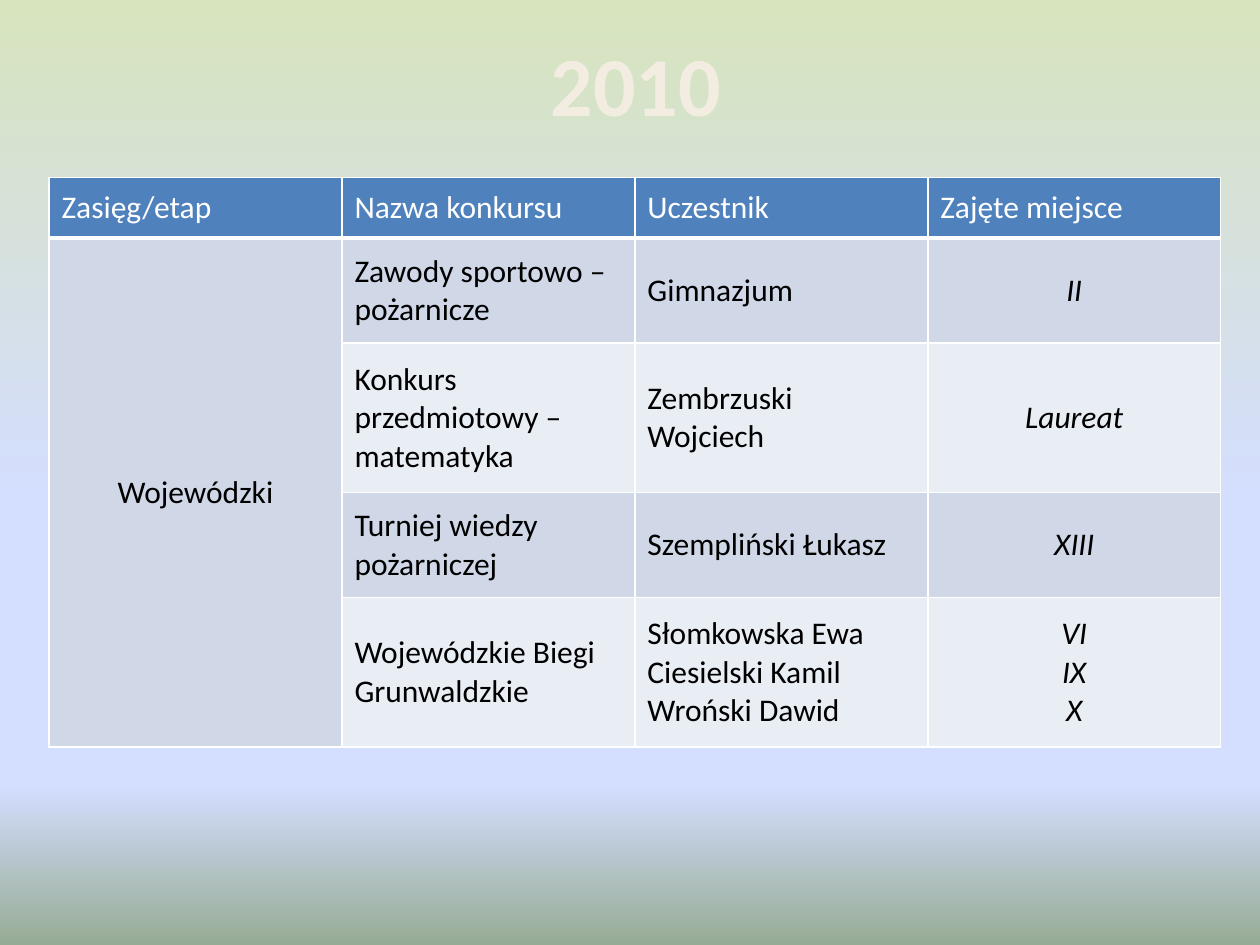
from copy import deepcopy
from dataclasses import dataclass

from lxml import etree
from pptx import Presentation
from pptx.dml.color import RGBColor
from pptx.enum.text import MSO_ANCHOR, PP_ALIGN
from pptx.oxml.ns import qn
from pptx.slide import Slide
from pptx.table import Table, _Cell
from pptx.text.text import TextFrame
from pptx.util import Pt

LEFT, CENTER = PP_ALIGN.LEFT, PP_ALIGN.CENTER
MIDDLE = MSO_ANCHOR.MIDDLE


@dataclass(frozen=True)
class Theme:
    font: str = "Calibri"
    title_size: float = 48
    table_size: float = 18
    title: str = "F2EDE0"
    header_text: str = "FFFFFF"
    body_text: str = "000000"
    header_fill: str = "4F81BD"
    bands: tuple[str, str] = ("D0D8E8", "E9EDF4")
    border: str = "FFFFFF"
    border_width: float = 1
    header_rule: float = 3
    background: tuple[tuple[float, str], ...] = (
        (0, "D7E4BD"), (0.53, "D4DEFF"), (0.83, "D4DEFF"), (1, "96AB94"))


@dataclass(frozen=True)
class Contest:
    name: str
    participants: str
    places: str
    height: float


THEME = Theme()
HEADERS = ("Zasięg/etap", "Nazwa konkursu", "Uczestnik", "Zajęte miejsce")
HEADER_HEIGHT = 34.5
STAGE = "Wojewódzki"
CONTESTS = (
    Contest("Zawody sportowo – pożarnicze", "Gimnazjum", "II", 60),
    Contest("Konkurs przedmiotowy – matematyka", "Zembrzuski Wojciech", "Laureat", 85.5),
    Contest("Turniej wiedzy pożarniczej", "Szempliński Łukasz", "XIII", 60),
    Contest("Wojewódzkie Biegi Grunwaldzkie",
            "Słomkowska Ewa\nCiesielski Kamil\nWroński Dawid", "VI\nIX\nX", 85.5),
)
TABLE_LEFT, TABLE_TOP, COLUMN_WIDTH = 28, 101.5, 167.4


def write(frame: TextFrame, text: str, *, color: str, size: float = THEME.table_size,
          bold: bool = False, italic: bool = False, align: PP_ALIGN = LEFT) -> None:
    """Write one paragraph for each line of the text."""
    frame.text = text
    for paragraph in frame.paragraphs:
        paragraph.alignment = align
        for run in paragraph.runs:
            run.font.name = THEME.font
            run.font.size = Pt(size)
            run.font.bold = bold
            run.font.italic = italic
            run.font.color.rgb = RGBColor.from_string(color)


def set_background(slide: Slide) -> None:
    fill = slide.background.fill
    fill.gradient()
    fill.gradient_angle = 270
    stop_list = slide.element.find(".//" + qn("a:gsLst"))
    while len(stop_list) < len(THEME.background):
        stop_list.append(deepcopy(stop_list[0]))
    for stop, (position, color) in zip(fill.gradient_stops, THEME.background):
        stop.position = position
        stop.color.rgb = RGBColor.from_string(color)


def add_title(slide: Slide, text: str) -> None:
    title = slide.shapes.add_textbox(Pt(39.5), Pt(11), Pt(648), Pt(73))
    title.text_frame.word_wrap = True
    title.text_frame.vertical_anchor = MIDDLE
    write(title.text_frame, text, color=THEME.title, size=THEME.title_size,
          bold=True, align=CENTER)


def style_cell(cell: _Cell, fill: str, bottom: float = THEME.border_width) -> None:
    """Set the fill, the anchor and the four borders."""
    cell.vertical_anchor = MIDDLE
    cell.fill.solid()
    cell.fill.fore_color.rgb = RGBColor.from_string(fill)
    properties = cell._tc.get_or_add_tcPr()
    for index, side in enumerate(("lnL", "lnR", "lnT", "lnB")):
        width = bottom if side == "lnB" else THEME.border_width
        line = etree.Element(qn(f"a:{side}"), w=str(Pt(width)))
        solid = etree.SubElement(line, qn("a:solidFill"))
        etree.SubElement(solid, qn("a:srgbClr"), val=THEME.border)
        properties.insert(index, line)


def fill_header(table: Table) -> None:
    table.rows[0].height = Pt(HEADER_HEIGHT)
    for cell, label in zip(table.rows[0].cells, HEADERS):
        style_cell(cell, THEME.header_fill, THEME.header_rule)
        write(cell.text_frame, label, color=THEME.header_text)


def fill_contests(table: Table) -> None:
    for row, contest in enumerate(CONTESTS, start=1):
        table.rows[row].height = Pt(contest.height)
        cells = list(table.rows[row].cells)
        band = THEME.bands[(row - 1) % 2]
        for cell in cells:
            style_cell(cell, band)
        write(cells[1].text_frame, contest.name, color=THEME.body_text)
        write(cells[2].text_frame, contest.participants, color=THEME.body_text)
        write(cells[3].text_frame, contest.places, color=THEME.body_text,
              italic=True, align=CENTER)
    stage = table.cell(1, 0)
    stage.merge(table.cell(len(CONTESTS), 0))
    write(stage.text_frame, STAGE, color=THEME.body_text, align=CENTER)


def add_results(slide: Slide) -> None:
    height = HEADER_HEIGHT + sum(contest.height for contest in CONTESTS)
    table = slide.shapes.add_table(
        len(CONTESTS) + 1, len(HEADERS), Pt(TABLE_LEFT), Pt(TABLE_TOP),
        Pt(COLUMN_WIDTH * len(HEADERS)), Pt(height)).table
    for column in table.columns:
        column.width = Pt(COLUMN_WIDTH)
    fill_header(table)
    fill_contests(table)


def main() -> None:
    presentation = Presentation()
    presentation.slide_width, presentation.slide_height = Pt(720), Pt(540)
    slide = presentation.slides.add_slide(presentation.slide_layouts[6])
    set_background(slide)
    add_title(slide, "2010")
    add_results(slide)
    presentation.save("out.pptx")


if __name__ == "__main__":
    main()
